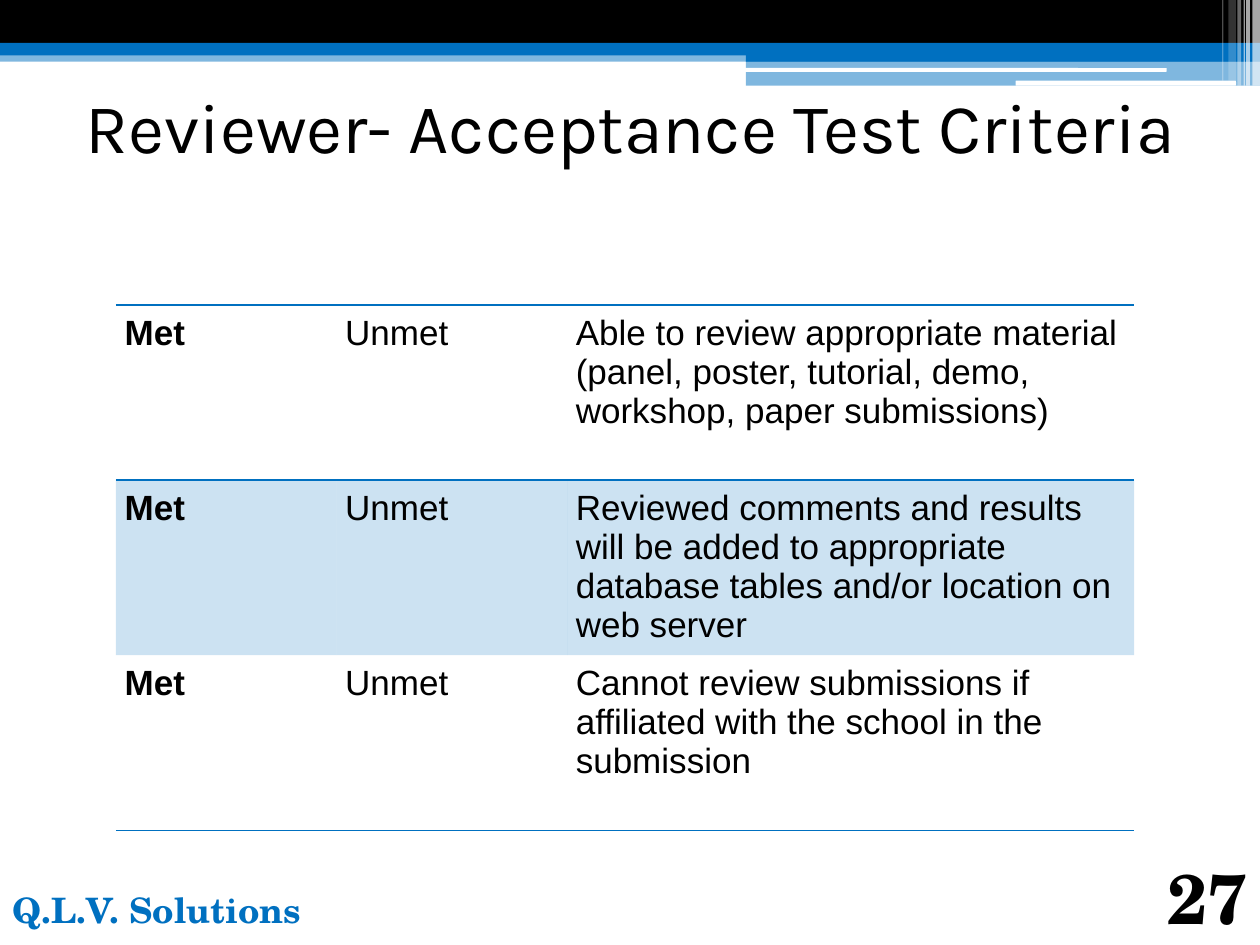
"""Build the reviewer acceptance test criteria slide."""
from dataclasses import dataclass
from typing import Any

import pptx
import pptx.util
import pptx.dml.color
import pptx.enum.shapes
import pptx.enum.text
import pptx.oxml.ns
from lxml import etree

EMU_PER_PX = 9144
COLORS = {"blue": "0070C0", "black": "000000", "white": "FFFFFF"}
SHAPES = pptx.enum.shapes.MSO_SHAPE
ALIGN = pptx.enum.text.PP_ALIGN
ANCHOR = pptx.enum.text.MSO_ANCHOR
NO_STYLE = "{2D5ABB26-0587-4C30-8999-92F81FD0307C}"
CELL_INSET = 7


@dataclass(frozen=True)
class Bar:
    left: int
    top: int
    width: int
    height: int
    color: str
    opacity: int = 100
    rounded: bool = False


@dataclass(frozen=True)
class Label:
    left: int
    top: int
    width: int
    height: int
    text: str
    font: str
    size: int
    color: str
    bold: bool
    align: Any
    anchor: Any


@dataclass(frozen=True)
class Criterion:
    text: str
    shaded: bool = False
    borders: tuple[str, ...] = ()


BARS = [
    Bar(0, 40, 1000, 9, "blue", 50),
    Bar(0, 0, 1000, 34, "black"),
    Bar(0, 34, 1000, 10, "blue"),
    Bar(592, 39, 408, 10, "blue"),
    Bar(592, 48, 408, 20, "blue", 50),
    Bar(591, 54, 335, 3, "white", rounded=True),
    Bar(806, 64, 175, 4, "white", rounded=True),
    Bar(994, 0, 6, 68, "white", 65),
    Bar(989, 0, 3, 68, "white", 65),
    Bar(987, 0, 1, 68, "white", 60),
    Bar(982, 0, 3, 68, "white", 40),
    Bar(975, 0, 6, 64, "white", 20),
    Bar(970, 0, 1, 64, "white", 30),
]
TITLE = Label(50, 50, 900, 100, "Reviewer- Acceptance Test Criteria", "Karla", 40,
              "black", False, ALIGN.CENTER, ANCHOR.MIDDLE)
FOOTERS = [
    Label(0, 700, 250, 50, "Q.L.V. Solutions", "TeX Gyre Schola", 20,
          "blue", True, ALIGN.LEFT, ANCHOR.TOP),
    Label(900, 690, 100, 60, "27", "TeX Gyre Schola", 40,
          "black", True, ALIGN.RIGHT, ANCHOR.BOTTOM),
]
COLUMN_WIDTHS = [175, 183, 450]
ROW_HEIGHT = 139
CRITERIA = [
    Criterion("Able to review appropriate material (panel, poster, tutorial, demo, "
              "workshop, paper submissions)", borders=("lnT", "lnB")),
    Criterion("Reviewed comments and results will be added to appropriate database "
              "tables and/or location on web server", shaded=True),
    Criterion("Cannot review submissions if affiliated with the school in the "
              "submission", borders=("lnB",)),
]


def px(length: int) -> int:
    """Turn px into EMU."""
    return pptx.util.Emu(length * EMU_PER_PX)


def rgb(color: str) -> pptx.dml.color.RGBColor:
    """Look up a named colour."""
    return pptx.dml.color.RGBColor.from_string(COLORS[color])


def apply_format(target: Any, values: dict[str, Any]) -> None:
    """Set each attribute of the target."""
    for name, value in values.items():
        setattr(target, name, value)


def add_child(parent: Any, tag: str, **attributes: str) -> Any:
    """Append a drawing element."""
    return etree.SubElement(parent, pptx.oxml.ns.qn(f"a:{tag}"), **attributes)


def paint(fill: Any, color: str, opacity: int = 100) -> None:
    """Give a fill its colour and opacity."""
    fill.solid()
    fill.fore_color.rgb = rgb(color)
    if opacity < 100:
        element = fill._xPr.find(f".//{pptx.oxml.ns.qn('a:srgbClr')}")
        add_child(element, "alpha", val=str(opacity * 1000))


def write(frame: Any, text: str, font: str, size: int, color: str, bold: bool,
          align: Any = ALIGN.LEFT) -> None:
    """Put one formatted paragraph in a text frame."""
    para = frame.paragraphs[0]
    para.alignment = align
    span = para.add_run()
    span.text = text
    apply_format(span.font, {"name": font, "size": pptx.util.Pt(size), "bold": bold})
    span.font.color.rgb = rgb(color)


def draw_bar(page: Any, bar: Bar) -> None:
    """Draw one bar of the header band."""
    kind = SHAPES.ROUNDED_RECTANGLE if bar.rounded else SHAPES.RECTANGLE
    box = page.shapes.add_shape(kind, px(bar.left), px(bar.top), px(bar.width), px(bar.height))
    box.shadow.inherit = False
    box.line.fill.background()
    paint(box.fill, bar.color, bar.opacity)


def fill_label(box: Any, label: Label) -> None:
    """Place and fill a text shape."""
    apply_format(box, {name: px(getattr(label, name))
                       for name in ("left", "top", "width", "height")})
    apply_format(box.text_frame, {"word_wrap": True, "vertical_anchor": label.anchor,
                                  "auto_size": pptx.enum.text.MSO_AUTO_SIZE.NONE})
    write(box.text_frame, label.text, label.font, label.size, label.color,
          label.bold, label.align)


def add_border(cell: Any, side: str) -> None:
    """Draw a thin blue line on one side of a cell."""
    line = add_child(cell._tc.get_or_add_tcPr(), side, w=str(pptx.util.Pt(1)))
    add_child(add_child(line, "solidFill"), "srgbClr", val=COLORS["blue"])


def draw_criteria(page: Any, left: int, top: int) -> None:
    """Draw the table of acceptance criteria."""
    table = page.shapes.add_table(len(CRITERIA), len(COLUMN_WIDTHS), px(left), px(top),
                                  px(sum(COLUMN_WIDTHS)), px(ROW_HEIGHT * len(CRITERIA))).table
    apply_format(table, {"first_row": False, "horz_banding": False})
    table._tbl.tblPr.find(pptx.oxml.ns.qn("a:tableStyleId")).text = NO_STYLE
    for column, width in zip(table.columns, COLUMN_WIDTHS):
        column.width = px(width)
    for row, criterion in zip(table.rows, CRITERIA):
        row.height = px(ROW_HEIGHT)
        for cell, text in zip(row.cells, ("Met", "Unmet", criterion.text)):
            apply_format(cell, {f"margin_{side}": px(CELL_INSET)
                                for side in ("left", "right", "top", "bottom")})
            for side in criterion.borders:
                add_border(cell, side)
            if criterion.shaded:
                paint(cell.fill, "blue", 20)
            else:
                cell.fill.background()
            write(cell.text_frame, text, "Arial", 20, "black", text == "Met")


def main() -> None:
    """Build and save the deck."""
    deck = pptx.Presentation()
    apply_format(deck, {"slide_width": px(1000), "slide_height": px(750)})
    page = deck.slides.add_slide(deck.slide_layouts[5])
    for bar in BARS:
        draw_bar(page, bar)
    fill_label(page.shapes.title, TITLE)
    for label in FOOTERS:
        fill_label(page.shapes.add_textbox(0, 0, 0, 0), label)
    draw_criteria(page, 92, 242)
    deck.save("out.pptx")


if __name__ == "__main__":
    main()
